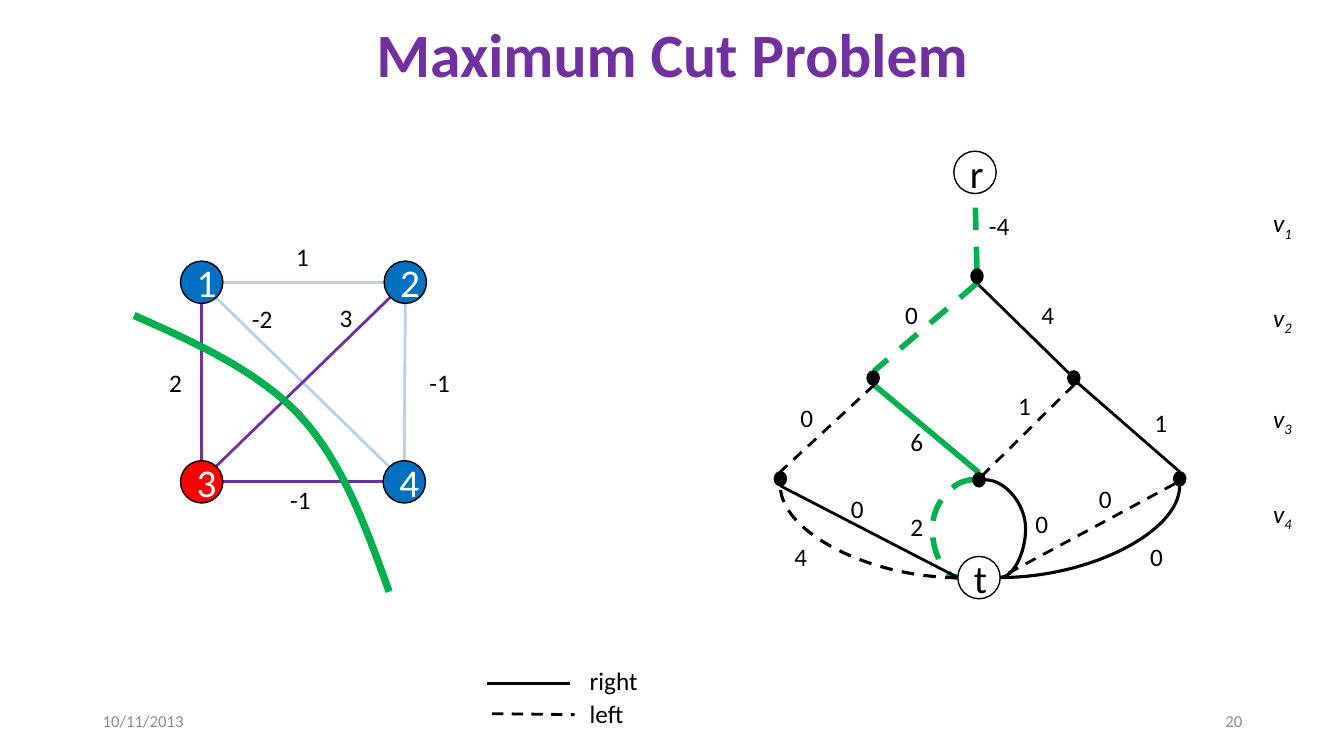
"""Build the maximum cut slide: weighted graph, decision diagram and legend."""
from dataclasses import dataclass

from lxml import etree
from pptx import Presentation
from pptx.dml.color import RGBColor
from pptx.enum.dml import MSO_LINE
from pptx.enum.shapes import MSO_CONNECTOR, MSO_SHAPE
from pptx.enum.text import MSO_ANCHOR, MSO_AUTO_SIZE, PP_ALIGN
from pptx.oxml.ns import qn
from pptx.slide import Slide
from pptx.util import Pt

PX = 9144
FONT = "Calibri"
BLACK = RGBColor(0x00, 0x00, 0x00)
WHITE = RGBColor(0xFF, 0xFF, 0xFF)
GRAY = RGBColor(0x8C, 0x8C, 0x8C)
PURPLE = RGBColor(0x70, 0x30, 0xA0)
GREEN = RGBColor(0x00, 0xB0, 0x50)
BLUE = RGBColor(0x00, 0x70, 0xC0)
PALE = RGBColor(0xB5, 0xD2, 0xEC)
RED = RGBColor(0xFF, 0x00, 0x00)

DASH = MSO_LINE.DASH
OVAL = MSO_SHAPE.OVAL
STRAIGHT = MSO_CONNECTOR.STRAIGHT
CURVE = MSO_CONNECTOR.CURVE
MIDDLE = MSO_ANCHOR.MIDDLE
FIT = MSO_AUTO_SIZE.SHAPE_TO_FIT_TEXT
LEFT, CENTER, RIGHT = PP_ALIGN.LEFT, PP_ALIGN.CENTER, PP_ALIGN.RIGHT


@dataclass
class Edge:
    x1: int
    y1: int
    x2: int
    y2: int
    color: RGBColor = BLACK
    width: float = 2
    dash: bool = False
    bend: str = ""
    adj: int = 0


@dataclass
class Node:
    x: int
    y: int
    text: str
    fill: RGBColor | None = None
    ink: RGBColor = WHITE


@dataclass
class Label:
    x: int
    y: int
    text: str
    width: int = 33
    sub: str = ""


@dataclass
class Foot:
    x: int
    text: str
    align: PP_ALIGN


DIAGRAM = [
    Edge(969, 267, 967, 192, GREEN, 4, True),
    Edge(1060, 370, 969, 281),
    Edge(867, 382, 971, 469, GREEN, 4),
    Edge(969, 281, 867, 368, GREEN, 4, True),
    Edge(1069, 380, 1170, 468),
    Edge(1165, 480, 992, 573, dash=True),
    Edge(867, 382, 774, 468, dash=True),
    Edge(977, 476, 992, 573, BLACK, 2.25, False, "curvedConnector3", 268200),
    Edge(965, 476, 950, 573, GREEN, 4, True, "curvedConnector3", 268900),
    Edge(1065, 382, 975, 471, dash=True),
    Edge(992, 573, 1170, 482, BLACK, 2.25, False, "curvedConnector2"),
    Edge(950, 573, 774, 482, BLACK, 2.25, True, "curvedConnector2"),
    Edge(774, 482, 950, 573),
]
GRAPH = [
    Edge(214, 295, 386, 463, PALE),
    Edge(221, 478, 380, 478, PURPLE),
    Edge(200, 457, 200, 301, PURPLE),
    Edge(401, 457, 402, 301, PALE),
    Edge(214, 463, 387, 295, PURPLE),
    Edge(221, 280, 381, 280, PALE),
]
LEGEND = [Edge(565, 678, 483, 678), Edge(488, 708, 570, 709, dash=True)]
NODES = [
    Node(946, 150, "r", ink=BLACK),
    Node(950, 552, "t", ink=BLACK),
    Node(179, 259, "1", BLUE),
    Node(381, 259, "2", BLUE),
    Node(179, 457, "3", RED),
    Node(380, 457, "4", BLUE),
]
DOTS = [(963, 267), (860, 368), (1059, 368),
        (768, 468), (965, 469), (1164, 468)]
LABELS = [
    Label(971, 204, "-4", 41), Label(888, 292, "0"), Label(1023, 292, "4"),
    Label(784, 394, "0"), Label(893, 418, "6"), Label(1000, 382, "1"),
    Label(1135, 399, "1"), Label(834, 484, "0"), Label(778, 532, "4"),
    Label(893, 502, "2"), Label(1017, 499, "0"), Label(1080, 475, "0"),
    Label(1131, 532, "0"),
    Label(284, 234, "1"), Label(158, 359, "2"), Label(240, 296, "-2", 41),
    Label(327, 295, "3"), Label(416, 359, "-1", 41),
    Label(278, 476, "-1", 41),
    Label(575, 655, "right", 68), Label(575, 688, "left", 55),
] + [Label(1253, y, "v", 40, str(i))
     for i, y in enumerate((201, 295, 395, 489), 1)]
FEET = [Foot(92, "10/11/2013", LEFT), Foot(942, "20", RIGHT)]
CUT = [
    ((133, 313), (194, 340), (256, 368), (298, 413)),
    ((298, 413), (340, 459), (363, 523), (386, 587)),
]
STEPS = 20


def add_run(para, text: str, size: int, color: RGBColor):
    run = para.add_run()
    run.text = text
    run.font.name = FONT
    run.font.size = Pt(size)
    run.font.color.rgb = color
    return run


def draw_title(slide: Slide, text: str) -> None:
    title = slide.shapes.title
    title.left, title.top = 92 * PX, 12 * PX
    title.width, title.height = 1150 * PX, 91 * PX
    title.text_frame.vertical_anchor = MIDDLE
    para = title.text_frame.paragraphs[0]
    para.alignment = CENTER
    para.line_spacing = 0.9
    add_run(para, text, 44, PURPLE).font.bold = True


def draw_foot(slide: Slide, foot: Foot) -> None:
    box = slide.shapes.add_textbox(foot.x * PX, 695 * PX, 300 * PX, 40 * PX)
    frame = box.text_frame
    frame.word_wrap = True
    frame.vertical_anchor = MIDDLE
    frame.paragraphs[0].alignment = foot.align
    add_run(frame.paragraphs[0], foot.text, 12, GRAY)


def draw_edge(slide: Slide, edge: Edge) -> None:
    link = slide.shapes.add_connector(
        CURVE if edge.bend else STRAIGHT,
        edge.x1 * PX, edge.y1 * PX, edge.x2 * PX, edge.y2 * PX)
    link.line.color.rgb = edge.color
    link.line.width = Pt(edge.width)
    if edge.dash:
        link.line.dash_style = DASH
    props = link._element.spPr
    etree.SubElement(props, qn("a:effectLst"))
    if edge.bend:
        geom = props.find(qn("a:prstGeom"))
        geom.set("prst", edge.bend)
        if edge.adj:
            etree.SubElement(geom.find(qn("a:avLst")), qn("a:gd"),
                             name="adj1", fmla=f"val {edge.adj}")


def draw_oval(slide: Slide, x: int, y: int, width: int, height: int,
              fill: RGBColor | None):
    oval = slide.shapes.add_shape(OVAL, x * PX, y * PX,
                                  width * PX, height * PX)
    oval.shadow.inherit = False
    if fill is None:
        oval.fill.background()
    else:
        oval.fill.solid()
        oval.fill.fore_color.rgb = fill
    oval.line.color.rgb = BLACK
    oval.line.width = Pt(1)
    return oval


def draw_node(slide: Slide, node: Node) -> None:
    frame = draw_oval(slide, node.x, node.y, 42, 42, node.fill).text_frame
    frame.vertical_anchor = MIDDLE
    frame.paragraphs[0].alignment = CENTER
    add_run(frame.paragraphs[0], node.text, 28, node.ink)


def draw_label(slide: Slide, label: Label) -> None:
    box = slide.shapes.add_textbox(label.x * PX, label.y * PX,
                                   label.width * PX, 40 * PX)
    frame = box.text_frame
    frame.word_wrap = False
    frame.auto_size = FIT
    para = frame.paragraphs[0]
    run = add_run(para, label.text, 18, BLACK)
    if label.sub:
        run.font.italic = True
        sub = add_run(para, label.sub, 18, BLACK)
        sub.font.italic = True
        sub.font._element.set("baseline", "-25000")


def draw_cut(slide: Slide) -> None:
    points = []
    for a, b, c, d in CUT:
        for step in range(1, STEPS + 1):
            t = step / STEPS
            u = 1 - t
            points.append(tuple(
                round(PX * (u**3 * p + 3*u*u*t * q + 3*u*t*t * r + t**3 * s))
                for p, q, r, s in zip(a, b, c, d)))
    x, y = CUT[0][0]
    pen = slide.shapes.build_freeform(x * PX, y * PX)
    pen.add_line_segments(points, close=False)
    curve = pen.convert_to_shape()
    curve.shadow.inherit = False
    curve.fill.background()
    curve.line.color.rgb = GREEN
    curve.line.width = Pt(5.25)


def main() -> None:
    deck = Presentation()
    deck.slide_width, deck.slide_height = 1333 * PX, 750 * PX
    slide = deck.slides.add_slide(deck.slide_layouts[5])
    draw_title(slide, "Maximum Cut Problem")
    for foot in FEET:
        draw_foot(slide, foot)
    for edge in DIAGRAM + GRAPH + LEGEND:
        draw_edge(slide, edge)
    for node in NODES:
        draw_node(slide, node)
    for x, y in DOTS:
        draw_oval(slide, x, y, 12, 14, BLACK)
    for label in LABELS:
        draw_label(slide, label)
    draw_cut(slide)
    deck.save("out.pptx")


if __name__ == "__main__":
    main()
